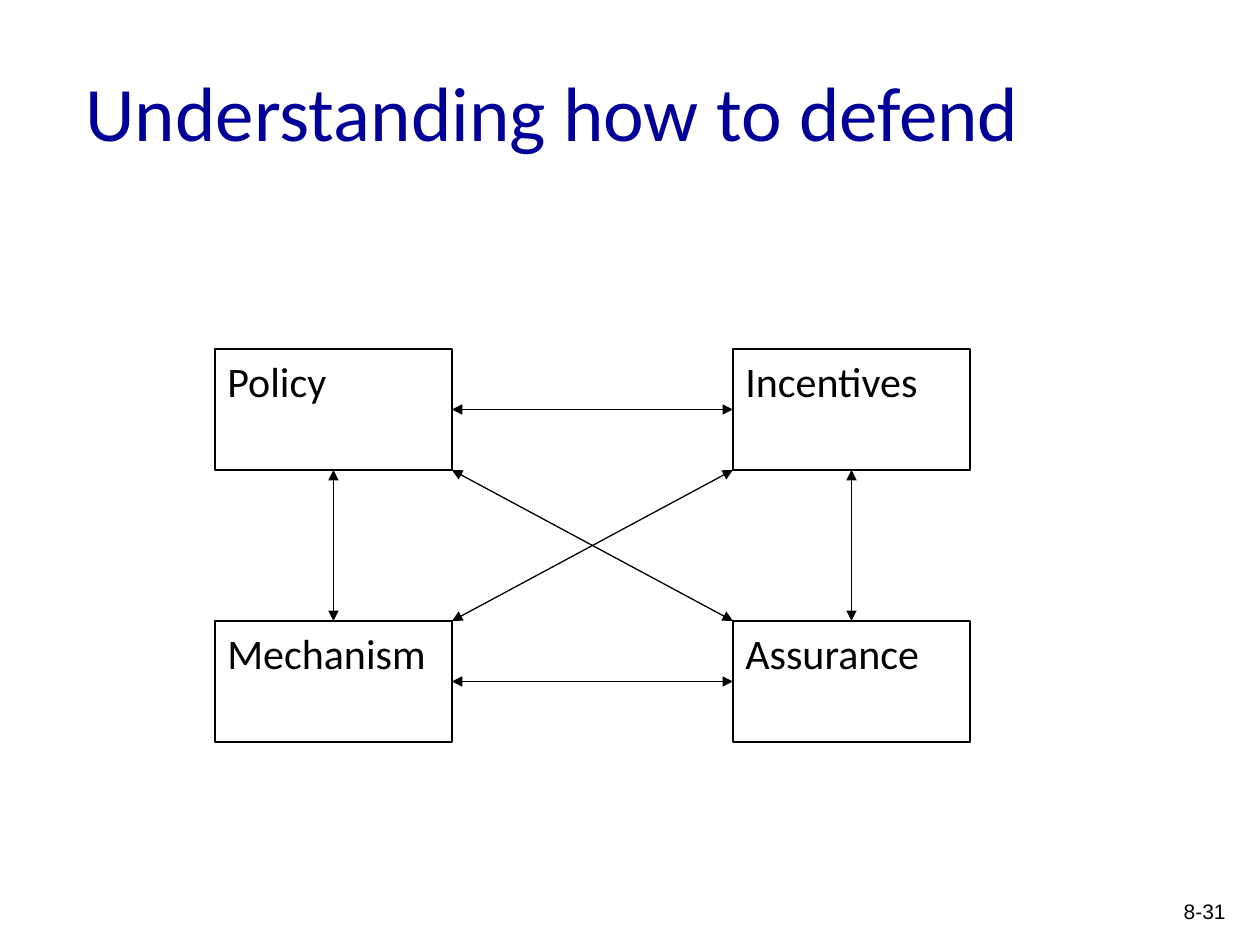
"""Build the slide on how policy, incentives, mechanism and assurance interact."""
from lxml import etree
from pptx import Presentation
from pptx.dml.color import RGBColor
from pptx.enum.shapes import MSO_CONNECTOR, MSO_SHAPE
from pptx.enum.text import MSO_ANCHOR, PP_ALIGN
from pptx.oxml.ns import qn
from pptx.util import Emu, Pt

RECTANGLE, STRAIGHT = MSO_SHAPE.RECTANGLE, MSO_CONNECTOR.STRAIGHT
TOP, MIDDLE = MSO_ANCHOR.TOP, MSO_ANCHOR.MIDDLE
LEFT, RIGHT = PP_ALIGN.LEFT, PP_ALIGN.RIGHT

TITLE = "Understanding how to defend"
PAGE_NUMBER = "8-31"
BLACK, NAVY = "000000", "000099"
COLUMNS, ROWS = (215, 733), (349, 621)
BOX_WIDTH, BOX_HEIGHT = 237, 121
BOXES = {
    "Policy": (0, 0),
    "Incentives": (1, 0),
    "Assurance": (1, 1),
    "Mechanism": (0, 1),
}
LINKS = [
    ("Policy", "Incentives"),
    ("Assurance", "Incentives"),
    ("Mechanism", "Assurance"),
    ("Mechanism", "Policy"),
    ("Assurance", "Policy"),
    ("Mechanism", "Incentives"),
]


def px(length):
    return Emu(round(length * 914400 / 126))


def colour(value):
    return RGBColor.from_string(value)


def place(shape, left, top, width, height):
    shape.left, shape.top = px(left), px(top)
    shape.width, shape.height = px(width), px(height)


def write(shape, text, size, font, fill, align=LEFT, anchor=TOP):
    frame = shape.text_frame
    frame.word_wrap = True
    frame.vertical_anchor = anchor
    para = frame.paragraphs[0]
    para.alignment = align
    span = para.add_run()
    span.text = text
    span.font.size = Pt(size)
    span.font.name = font
    span.font.color.rgb = colour(fill)


def outline(shape):
    shape.line.color.rgb = colour(BLACK)
    shape.line.width = Pt(0.75)


def add_box(page, name, column, row):
    box = page.shapes.add_shape(
        RECTANGLE, px(COLUMNS[column]), px(ROWS[row]), px(BOX_WIDTH), px(BOX_HEIGHT))
    box.shadow.inherit = False
    box.fill.background()
    outline(box)
    write(box, name, 24, "Calibri", BLACK)


def anchor_point(name, other):
    """Return the point on the edge or corner of a box that faces another box."""
    (column, row), (other_column, other_row) = BOXES[name], BOXES[other]
    across = (1 + other_column - column) / 2
    down = (1 + other_row - row) / 2
    return COLUMNS[column] + across * BOX_WIDTH, ROWS[row] + down * BOX_HEIGHT


def add_link(page, start, end):
    points = anchor_point(start, end) + anchor_point(end, start)
    link = page.shapes.add_connector(STRAIGHT, *map(px, points))
    outline(link)
    for tag in ("a:headEnd", "a:tailEnd"):
        etree.SubElement(link.line._get_or_add_ln(), qn(tag), type="triangle")
    etree.SubElement(link._element.spPr, qn("a:effectLst"))


def main():
    deck = Presentation()
    deck.slide_width, deck.slide_height = px(1260), px(945)
    page = deck.slides.add_slide(deck.slide_layouts[5])
    title = page.shapes.title
    place(title, 73, 32, 1071, 157)
    write(title, TITLE, 44, "Calibri", NAVY, anchor=MIDDLE)
    for name, cell in BOXES.items():
        add_box(page, name, *cell)
    for start, end in LINKS:
        add_link(page, start, end)
    number = page.shapes.add_textbox(px(1145), px(892), px(93), px(42))
    write(number, PAGE_NUMBER, 12, "Arial", BLACK, align=RIGHT)
    deck.save("out.pptx")


if __name__ == "__main__":
    main()
